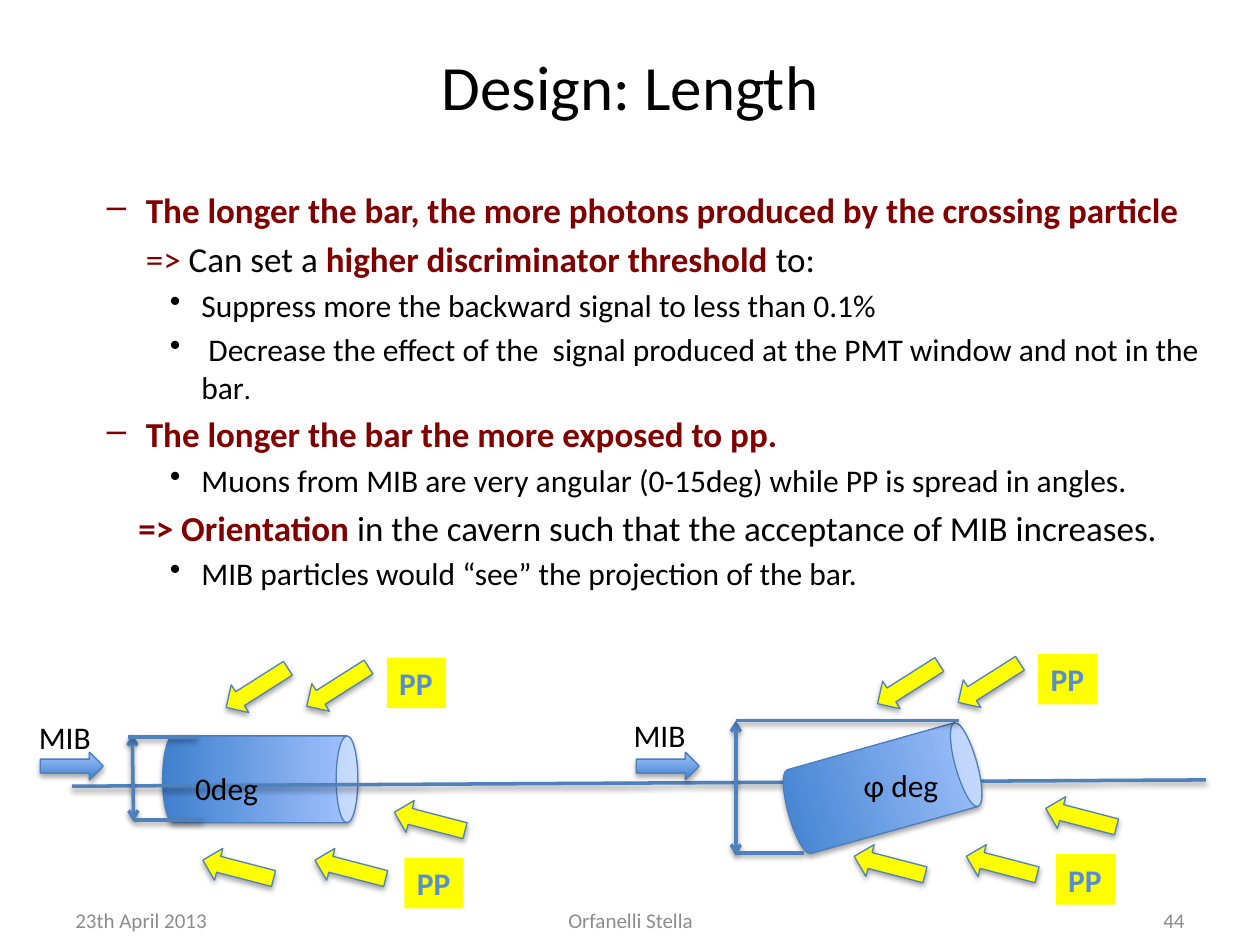
from lxml.etree import SubElement
from pptx import Presentation
from pptx.dml.color import RGBColor
from pptx.enum.shapes import MSO_CONNECTOR, MSO_SHAPE
from pptx.enum.text import MSO_ANCHOR, PP_ALIGN
from pptx.oxml.ns import qn
from pptx.util import Inches, Pt

COLORS = {
    "black": "000000", "maroon": "800000", "gray": "8C8C8C",
    "line": "4F81BD", "outline": "4B7EBC", "label": "558ED5",
    "yellow": "FFFF00", "dark_blue": "3F80CE", "light_blue": "A4C4FF",
}
# kind: (left margin, hanging indent, bullet)
LEVELS = {
    "point": (0.81, -0.31, "–"),
    "result": (0.81, 0, None),
    "conclusion": (0.75, 0, None),
    "detail": (1.25, -0.25, "•"),
}
# Each run: text, size, colour, bold
BODY = [
    ("point", [("The longer the bar, the more photons produced by the crossing particle",
                20, "maroon", True)]),
    ("result", [("=>", 20, "maroon", False), (" Can set a ", 20, "black", False),
                ("higher discriminator threshold ", 20, "maroon", True),
                ("to:", 20, "black", False)]),
    ("detail", [("Suppress more the backward signal to less than 0.1%", 18, "black", False)]),
    ("detail", [(" Decrease the effect of the  signal produced at the PMT window and not in the bar",
                 18, "black", False), (".", 16, "black", False)]),
    ("point", [("The longer the bar the more exposed to pp.", 20, "maroon", True)]),
    ("detail", [("Muons from MIB are very angular (0-15deg) while PP is spread in angles.",
                 18, "black", False)]),
    ("conclusion", [("=> Orientation", 20, "maroon", True),
                    (" in the cavern such that the acceptance of MIB increases.",
                     20, "black", False)]),
    ("detail", [("MIB particles would “see” the projection of the bar.", 18, "black", False)]),
]
PP_ARROWS = [(2.49, 6.77, 14.6), (1.6, 6.77, 14.6), (2.39, 5.32, -32.4),
             (1.75, 5.33, -32.4), (3.12, 6.39, 14.6)]
PP_LABELS = [(3.07, 5.22), (3.21, 6.81)]
PP_OFFSETS = [(0, 0), (5.17, -0.03)]


def rgb(name):
    return RGBColor.from_string(COLORS[name])


class SlideBuilder:
    font = "Calibri"

    def __init__(self, slide):
        self.slide = slide

    def run(self, paragraph, text, size, color="black", bold=False):
        run = paragraph.add_run()
        run.text = text
        run.font.name = self.font
        run.font.size = Pt(size)
        run.font.bold = bold
        run.font.color.rgb = rgb(color)

    def title(self, text, left, top, width, height):
        title = self.slide.shapes.title
        title.left, title.top = Inches(left), Inches(top)
        title.width, title.height = Inches(width), Inches(height)
        title.text_frame.vertical_anchor = MSO_ANCHOR.MIDDLE
        paragraph = title.text_frame.paragraphs[0]
        paragraph.alignment = PP_ALIGN.CENTER
        self.run(paragraph, text, 36)

    def box(self, left, top, width, height):
        box = self.slide.shapes.add_textbox(
            Inches(left), Inches(top), Inches(width), Inches(height))
        box.text_frame.word_wrap = True
        return box

    def label(self, text, left, top, width, size=18, color="black", bold=False,
              align=PP_ALIGN.LEFT, fill=None):
        box = self.box(left, top, width, 0.4)
        frame = box.text_frame
        frame.vertical_anchor = MSO_ANCHOR.MIDDLE
        frame.paragraphs[0].alignment = align
        self.run(frame.paragraphs[0], text, size, color, bold)
        if fill:
            frame.word_wrap = False
            box.fill.solid()
            box.fill.fore_color.rgb = rgb(fill)

    def outline_text(self, left, top, width, height, items):
        frame = self.box(left, top, width, height).text_frame
        for index, (kind, runs) in enumerate(items):
            paragraph = frame.add_paragraph() if index else frame.paragraphs[0]
            margin, indent, bullet = LEVELS[kind]
            properties = paragraph._p.get_or_add_pPr()
            properties.set("marL", str(Inches(margin)))
            properties.set("indent", str(Inches(indent)))
            if bullet:
                SubElement(properties, qn("a:buChar"), char=bullet)
            if index:
                paragraph.space_before = Pt(0.2 * runs[0][1])
            for run in runs:
                self.run(paragraph, *run)

    def shadow(self, shape, distance, opacity):
        """Add a soft downward shadow; call after fill and line are set."""
        effects = SubElement(shape._element.spPr, qn("a:effectLst"))
        outer = SubElement(effects, qn("a:outerShdw"), blurRad=str(Pt(3.1)),
                           dist=str(Pt(distance)), dir="5400000", rotWithShape="0")
        color = SubElement(outer, qn("a:srgbClr"), val=COLORS["black"])
        SubElement(color, qn("a:alpha"), val=str(opacity * 1000))

    def shape(self, kind, left, top, width, height, rotation=0, fill=None):
        """Add a preset shape, with the blue gradient unless a fill is named."""
        shape = self.slide.shapes.add_shape(
            kind, Inches(left), Inches(top), Inches(width), Inches(height))
        shape.rotation = rotation
        if fill:
            shape.fill.solid()
            shape.fill.fore_color.rgb = rgb(fill)
        else:
            shape.fill.gradient()
            shape.fill.gradient_angle = 90
            for stop, color in zip(shape.fill.gradient_stops, ("dark_blue", "light_blue")):
                stop.color.rgb = rgb(color)
        shape.line.color.rgb = rgb("line" if fill else "outline")
        shape.line.width = Pt(0.75)
        self.shadow(shape, 1.8, 35)

    def line(self, x1, y1, x2, y2, arrows=False):
        line = self.slide.shapes.add_connector(
            MSO_CONNECTOR.STRAIGHT, Inches(x1), Inches(y1), Inches(x2), Inches(y2))
        line.line.color.rgb = rgb("line")
        line.line.width = Pt(2)
        if arrows:
            for end in ("a:headEnd", "a:tailEnd"):
                SubElement(line.line._ln, qn(end), type="arrow")
        self.shadow(line, 1.6, 38)


def main():
    presentation = Presentation()
    presentation.slide_width, presentation.slide_height = Inches(10), Inches(7.5)
    slide = presentation.slides.add_slide(presentation.slide_layouts[5])
    builder = SlideBuilder(slide)

    builder.title("Design: Length", 1.29, 0, 7.42, 1.35)
    builder.outline_text(0.25, 1.45, 9.56, 5.83, BODY)

    # Bar along the beam, and the beam axis
    builder.shape(MSO_SHAPE.CAN, 1.72, 5.41, 0.69, 1.55, 90)
    builder.line(0.57, 6.24, 9.57, 6.19)
    builder.label("0deg", 1.45, 6.05, 1.17)
    builder.line(1.05, 5.83, 1.06, 6.52, arrows=True)
    builder.line(1.06, 6.51, 1.61, 6.51)
    builder.line(1.02, 5.85, 1.56, 5.85)

    # Incoming MIB
    for arrow_left, label_left, label_top in ((0.32, 0.21, 5.65), (5.05, 4.93, 5.63)):
        builder.shape(MSO_SHAPE.RIGHT_ARROW, arrow_left, 5.97, 0.5, 0.22)
        builder.label("MIB", label_left, label_top, 0.72)

    # Tilted bar and its projection
    builder.shape(MSO_SHAPE.CAN, 6.66, 5.48, 0.69, 1.55, 74.3)
    builder.line(5.84, 5.72, 5.84, 6.79, arrows=True)
    builder.line(5.84, 5.72, 7.61, 5.72)
    builder.line(5.84, 6.77, 6.38, 6.77)
    builder.label(" φ deg", 6.7, 6.03, 0.91)

    # Footer
    for text, left, width, align in (("23th April 2013", 0.5, 2.33, PP_ALIGN.LEFT),
                                     ("Orfanelli Stella", 3.42, 3.17, PP_ALIGN.CENTER),
                                     ("44", 7.17, 2.33, PP_ALIGN.RIGHT)):
        builder.label(text, left, 7.1, width, size=12, color="gray", align=align)

    # PP particles around each bar
    for dx, dy in PP_OFFSETS:
        for left, top, rotation in PP_ARROWS:
            builder.shape(MSO_SHAPE.LEFT_ARROW, left + dx, top + dy, 0.58, 0.26,
                          rotation, "yellow")
        for left, top in PP_LABELS:
            builder.label("PP", left + dx, top + dy, 0.47, color="label", bold=True,
                          fill="yellow")

    presentation.save("out.pptx")


if __name__ == "__main__":
    main()
